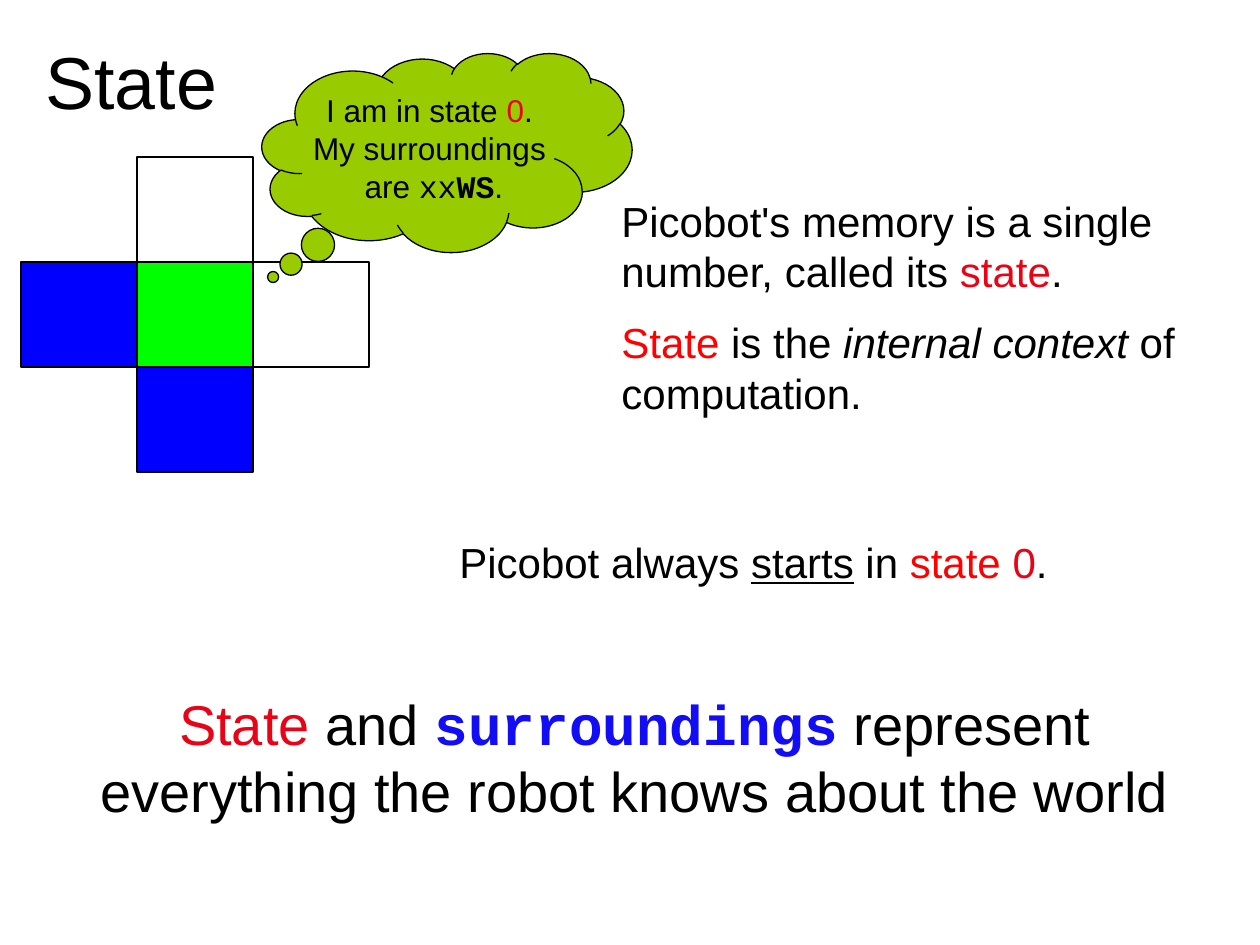
from dataclasses import dataclass
from typing import Optional

from pptx import Presentation
from pptx.dml.color import RGBColor
from pptx.enum.shapes import MSO_SHAPE
from pptx.enum.text import MSO_ANCHOR, PP_ALIGN
from pptx.util import Emu, Pt

EMU_PER_PX = 914400 / 126


@dataclass(frozen=True)
class Theme:
    black: str = "000000"
    red: str = "FF0000"
    crimson: str = "E80416"
    word_blue: str = "120DF3"
    wall: str = "0000FF"
    robot: str = "00FF00"
    cloud: str = "99CC00"
    sans: str = "Arial"
    mono: str = "Courier New"
    title: int = 42
    summary: int = 32
    body: int = 24
    thought: int = 18
    outline: float = 0.75


THEME = Theme()


@dataclass(frozen=True)
class Box:
    left: int
    top: int
    width: int
    height: int

    def emu(self) -> tuple:
        sides = (self.left, self.top, self.width, self.height)
        return tuple(px(side) for side in sides)


@dataclass(frozen=True)
class Span:
    text: str
    color: Optional[str] = None
    font: Optional[str] = None
    bold: Optional[bool] = None
    italic: Optional[bool] = None
    underline: Optional[bool] = None


@dataclass(frozen=True)
class Cell:
    column: int
    row: int
    fill: Optional[str] = None


@dataclass(frozen=True)
class Passage:
    box: Box
    size: int
    paras: list
    align: PP_ALIGN = PP_ALIGN.LEFT


GRID = Box(21, 157, 116, 105)
CELLS = [
    Cell(1, 1, THEME.robot),
    Cell(0, 1, THEME.wall),
    Cell(1, 0),
    Cell(1, 2, THEME.wall),
    Cell(2, 1),
]
TITLE_BOX = Box(33, 30, 410, 101)
CLOUD_BOX = Box(262, 53, 370, 199)
CLOUD_TAIL = (-0.47, 0.626)
THOUGHT = [
    [Span("I am in state "), Span("0", THEME.crimson), Span(". ")],
    [Span("My surroundings ")],
    [Span("are "), Span("xx", font=THEME.mono),
     Span("WS", font=THEME.mono, bold=True), Span(".")],
]
PASSAGES = [
    Passage(Box(609, 189, 609, 239), THEME.body, [
        [Span("Picobot's memory is a single number, called its "),
         Span("state", THEME.crimson), Span(".")],
        [Span("State", THEME.red), Span(" is the "),
         Span("internal context ", italic=True), Span("of computation.")],
    ]),
    Passage(Box(73, 683, 1124, 147), THEME.summary, [
        [Span("State", THEME.crimson), Span(" and "),
         Span("surroundings", THEME.word_blue, THEME.mono, bold=True),
         Span(" represent everything the robot knows about the world")],
    ], PP_ALIGN.CENTER),
    Passage(Box(447, 530, 640, 63), THEME.body, [
        [Span("Picobot always "), Span("starts", underline=True), Span(" in "),
         Span("state ", THEME.red), Span("0", THEME.crimson), Span(".")],
    ]),
]


def px(length: int) -> Emu:
    return Emu(round(length * EMU_PER_PX))


def write_paras(frame, paras: list, size: int, align: PP_ALIGN, space: float) -> None:
    for index, spans in enumerate(paras):
        para = frame.add_paragraph() if index else frame.paragraphs[0]
        para.alignment = align
        para.space_before = Pt(space)
        para.font.size = Pt(size)
        para.font.name = THEME.sans
        para.font.color.rgb = RGBColor.from_string(THEME.black)
        for span in spans:
            run = para.add_run()
            run.text = span.text
            run.font.bold = span.bold
            run.font.italic = span.italic
            run.font.underline = span.underline
            if span.font:
                run.font.name = span.font
            if span.color:
                run.font.color.rgb = RGBColor.from_string(span.color)


def add_outlined(page, kind: MSO_SHAPE, box: Box, fill: Optional[str]):
    shape = page.shapes.add_shape(kind, *box.emu())
    shape.shadow.inherit = False
    if fill:
        shape.fill.solid()
        shape.fill.fore_color.rgb = RGBColor.from_string(fill)
    else:
        shape.fill.background()
    shape.line.color.rgb = RGBColor.from_string(THEME.black)
    shape.line.width = Pt(THEME.outline)
    return shape


def add_title(page, text: str) -> None:
    title = page.shapes.title
    title.left, title.top, title.width, title.height = TITLE_BOX.emu()
    title.text_frame.vertical_anchor = MSO_ANCHOR.TOP
    write_paras(title.text_frame, [[Span(text)]], THEME.title,
                PP_ALIGN.LEFT, THEME.title / 2)


def add_cell(page, cell: Cell) -> None:
    box = Box(GRID.left + cell.column * GRID.width,
              GRID.top + cell.row * GRID.height, GRID.width, GRID.height)
    add_outlined(page, MSO_SHAPE.RECTANGLE, box, cell.fill)


def add_passage(page, passage: Passage) -> None:
    frame = page.shapes.add_textbox(*passage.box.emu()).text_frame
    frame.word_wrap = True
    write_paras(frame, passage.paras, passage.size, passage.align,
                passage.size / 2)


def add_thought(page) -> None:
    cloud = add_outlined(page, MSO_SHAPE.CLOUD_CALLOUT, CLOUD_BOX, THEME.cloud)
    for index, offset in enumerate(CLOUD_TAIL):
        cloud.adjustments[index] = offset
    frame = cloud.text_frame
    frame.word_wrap = False
    frame.vertical_anchor = MSO_ANCHOR.MIDDLE
    write_paras(frame, THOUGHT, THEME.thought, PP_ALIGN.CENTER, 0)


def main() -> None:
    deck = Presentation()
    deck.slide_width, deck.slide_height = px(1260), px(945)
    page = deck.slides.add_slide(deck.slide_layouts[5])
    add_title(page, "State")
    for cell in CELLS:
        add_cell(page, cell)
    for passage in PASSAGES:
        add_passage(page, passage)
    add_thought(page)
    deck.save("out.pptx")


if __name__ == "__main__":
    main()
